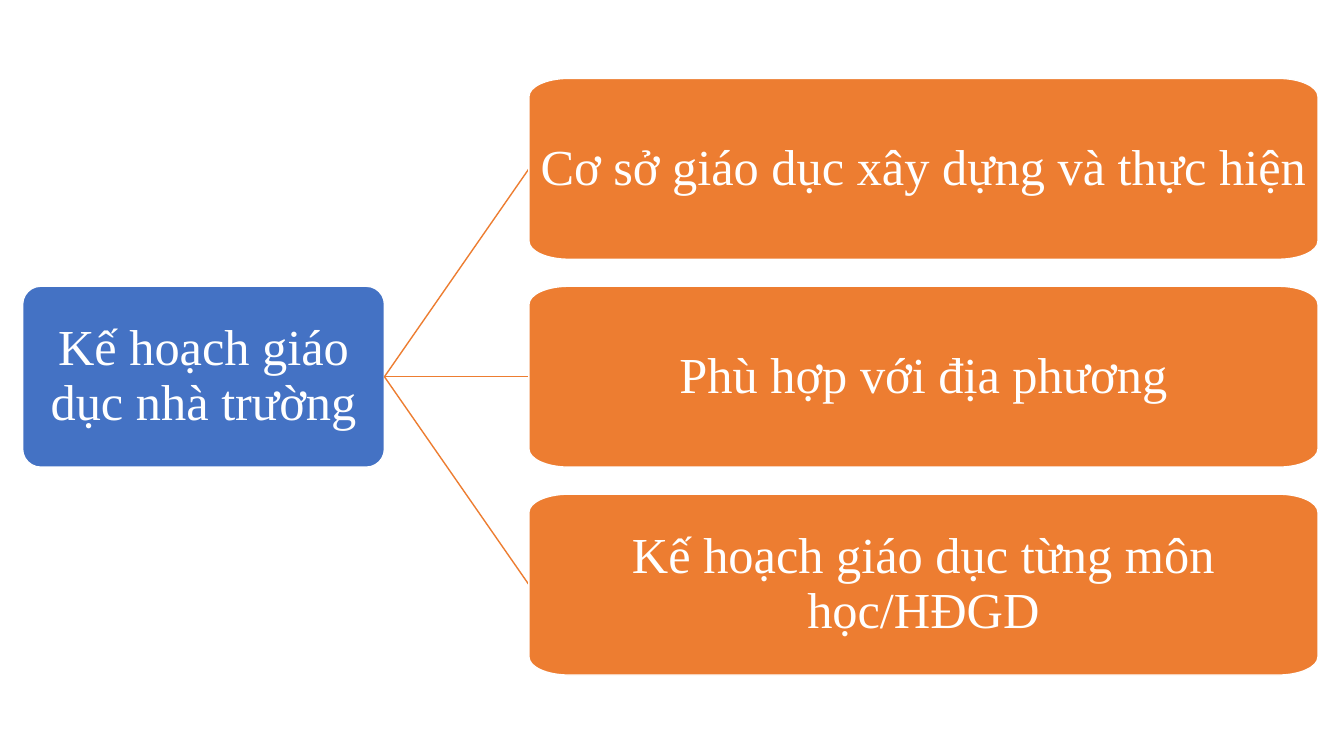
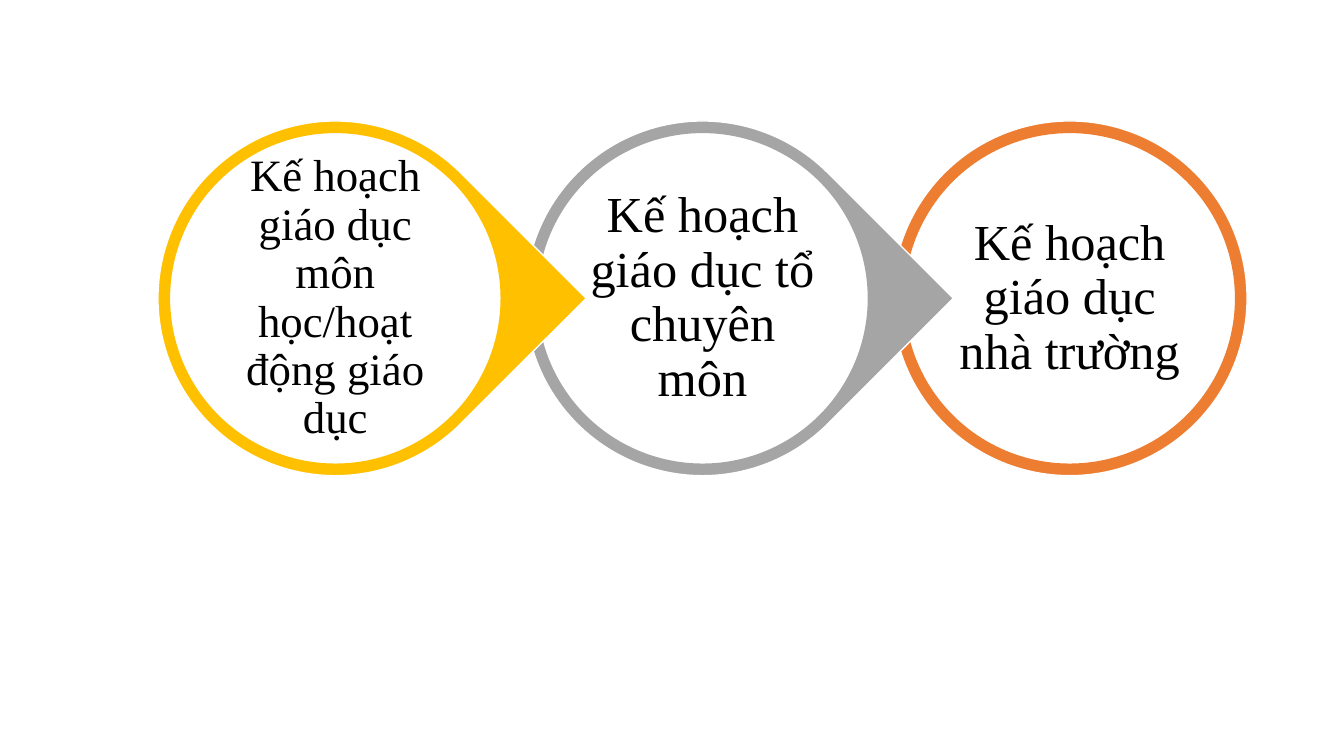
"""Build two diagram slides about the school education plan."""
import pptx
import pptx.dml.color
import pptx.enum.shapes
import pptx.enum.text
import pptx.oxml
import pptx.oxml.ns
import pptx.util

Pt = pptx.util.Pt
RGBColor = pptx.dml.color.RGBColor
SHAPE = pptx.enum.shapes.MSO_SHAPE

WHITE = RGBColor(0xFF, 0xFF, 0xFF)
BLACK = RGBColor(0x00, 0x00, 0x00)
BLUE = RGBColor(0x44, 0x72, 0xC4)
ORANGE = RGBColor(0xED, 0x7D, 0x31)
GRAY = RGBColor(0xA5, 0xA5, 0xA5)
GOLD = RGBColor(0xFF, 0xC0, 0x00)

FONT = "Times New Roman"
LINE_WIDTH = 1

ROOT_TEXT = "Kế hoạch giáo dục nhà trường"
ROOT_LEFT, ROOT_WIDTH = 16.2, 258.4
BRANCH_LEFT, BRANCH_WIDTH = 377.8, 563.6
BOX_HEIGHT, BOX_PITCH, BOX_MIDDLE = 129.2, 148.5, 269.1
CORNER = 0.1
CURVE = 0.55
BOX_INSET = 5.6
BRANCHES = (
    "Cơ sở giáo dục xây dựng và thực hiện",
    "Phù hợp với địa phương",
    "Kế hoạch giáo dục từng môn học/HĐGD",
)

RING_SIZE, DISC_SIZE = 253.4, 237
STAGE_START, STAGE_PITCH, STAGE_MIDDLE = 239.5, 262.3, 213.1
DISC_INSET = 2.5
STAGES = (
    ("Kế hoạch giáo dục môn học/hoạt động giáo dục", 32, GOLD, SHAPE.TEAR),
    ("Kế hoạch giáo dục tổ chuyên môn", 36, GRAY, SHAPE.TEAR),
    (ROOT_TEXT, 36, ORANGE, SHAPE.OVAL),
)


def set_all(target, values):
    """Set every attribute named in a dict of format values."""
    for name, value in values.items():
        setattr(target, name, value)


def paint(shape, fill, line):
    """Give a shape a plain fill and outline without a shadow."""
    shape.shadow.inherit = False
    shape.fill.solid()
    shape.fill.fore_color.rgb = fill
    shape.line.color.rgb = line
    shape.line.width = Pt(LINE_WIDTH)


def write(shape, text, size, color, inset):
    """Write one centred paragraph inside a shape."""
    frame = shape.text_frame
    set_all(frame, {
        "word_wrap": True,
        "vertical_anchor": pptx.enum.text.MSO_ANCHOR.MIDDLE,
        **{f"margin_{side}": Pt(inset) for side in ("left", "top", "right", "bottom")},
    })
    para = frame.paragraphs[0]
    set_all(para, {"alignment": pptx.enum.text.PP_ALIGN.CENTER, "line_spacing": 0.9})
    span = para.add_run()
    span.text = text
    set_all(span.font, {"name": FONT, "size": Pt(size)})
    span.font.color.rgb = color


def add_centred(shapes, kind, center, middle, size):
    """Add a square preset shape around a centre point."""
    return shapes.add_shape(
        kind, Pt(center - size / 2), Pt(middle - size / 2), Pt(size), Pt(size))


def add_root(page):
    """Add the blue box that the branches start from."""
    box = page.shapes.add_shape(
        SHAPE.ROUNDED_RECTANGLE, Pt(ROOT_LEFT), Pt(BOX_MIDDLE - BOX_HEIGHT / 2),
        Pt(ROOT_WIDTH), Pt(BOX_HEIGHT))
    box.adjustments[0] = CORNER
    paint(box, BLUE, WHITE)
    write(box, ROOT_TEXT, 36, WHITE, BOX_INSET)
    return box


def branch_outline(middle):
    """Return four points per corner: its end, two curve handles and its start."""
    radius_x, radius_y = BRANCH_WIDTH * CORNER / 2, BOX_HEIGHT * CORNER
    center = BRANCH_LEFT + BRANCH_WIDTH / 2
    upright = ((0, 1), (0, 1 - CURVE), (1 - CURVE, 0), (1, 0))
    points = []
    for side_x, side_y in ((-1, -1), (1, -1), (1, 1), (-1, 1)):
        order = upright if side_x == side_y else upright[::-1]
        points += [(
            Pt(center + side_x * (BRANCH_WIDTH / 2 - across * radius_x)),
            Pt(middle + side_y * (BOX_HEIGHT / 2 - down * radius_y)),
        ) for across, down in order]
    return points


def round_corners(box):
    """Turn the three segments at each corner into one curve."""
    segments = list(box.element.iter(pptx.oxml.ns.qn("a:lnTo")))
    for first in range(0, len(segments), 4):
        corner = segments[first:first + 3]
        curve = pptx.oxml.parse_xml(
            f'<a:cubicBezTo {pptx.oxml.ns.nsdecls("a")}/>')
        corner[0].addprevious(curve)
        for segment in corner:
            curve.append(segment[0])
            segment.getparent().remove(segment)


def add_branch(page, text, middle):
    """Add one orange branch box."""
    start, *rest = branch_outline(middle)
    builder = page.shapes.build_freeform(*start, scale=1.0)
    builder.add_line_segments(rest, close=True)
    box = builder.convert_to_shape()
    round_corners(box)
    paint(box, ORANGE, WHITE)
    write(box, text, 36, WHITE, BOX_INSET)


def add_link(page, root, middle):
    """Add a line from the root box to the left side of a branch."""
    link = page.shapes.add_connector(
        pptx.enum.shapes.MSO_CONNECTOR.STRAIGHT,
        Pt(ROOT_LEFT + ROOT_WIDTH), Pt(BOX_MIDDLE), Pt(BRANCH_LEFT), Pt(middle))
    link.begin_connect(root, 3)
    link.line.color.rgb = ORANGE
    link.line.width = Pt(LINE_WIDTH)
    properties = link.element.find(pptx.oxml.ns.qn("p:spPr"))
    properties.append(pptx.oxml.parse_xml(
        f'<a:effectLst {pptx.oxml.ns.nsdecls("a")}/>'))


def add_stage(page, text, size, color, kind, center):
    """Add a coloured ring, pointed or round, with a white text disc."""
    group = page.shapes.add_group_shape()
    ring = add_centred(group.shapes, kind, center, STAGE_MIDDLE, RING_SIZE)
    if kind == SHAPE.TEAR:
        ring.rotation = 45
    paint(ring, color, WHITE)
    disc = add_centred(group.shapes, SHAPE.OVAL, center, STAGE_MIDDLE, DISC_SIZE)
    paint(disc, WHITE, color)
    write(disc, text, size, BLACK, DISC_INSET)


def build_branches(page):
    """Draw the school plan and its three branches."""
    root = add_root(page)
    for index, text in enumerate(BRANCHES):
        middle = BOX_MIDDLE + (index - 1) * BOX_PITCH
        add_link(page, root, middle)
        add_branch(page, text, middle)


def build_stages(page):
    """Draw the chain of plans, the last stage at the back."""
    for index, stage in reversed(list(enumerate(STAGES))):
        add_stage(page, *stage, STAGE_START + index * STAGE_PITCH)


def main():
    """Build and save the deck."""
    deck = pptx.Presentation()
    set_all(deck, {"slide_width": Pt(960), "slide_height": Pt(540)})
    blank = deck.slide_layouts[6]
    for build in (build_branches, build_stages):
        build(deck.slides.add_slide(blank))
    deck.save("out.pptx")


if __name__ == "__main__":
    main()
